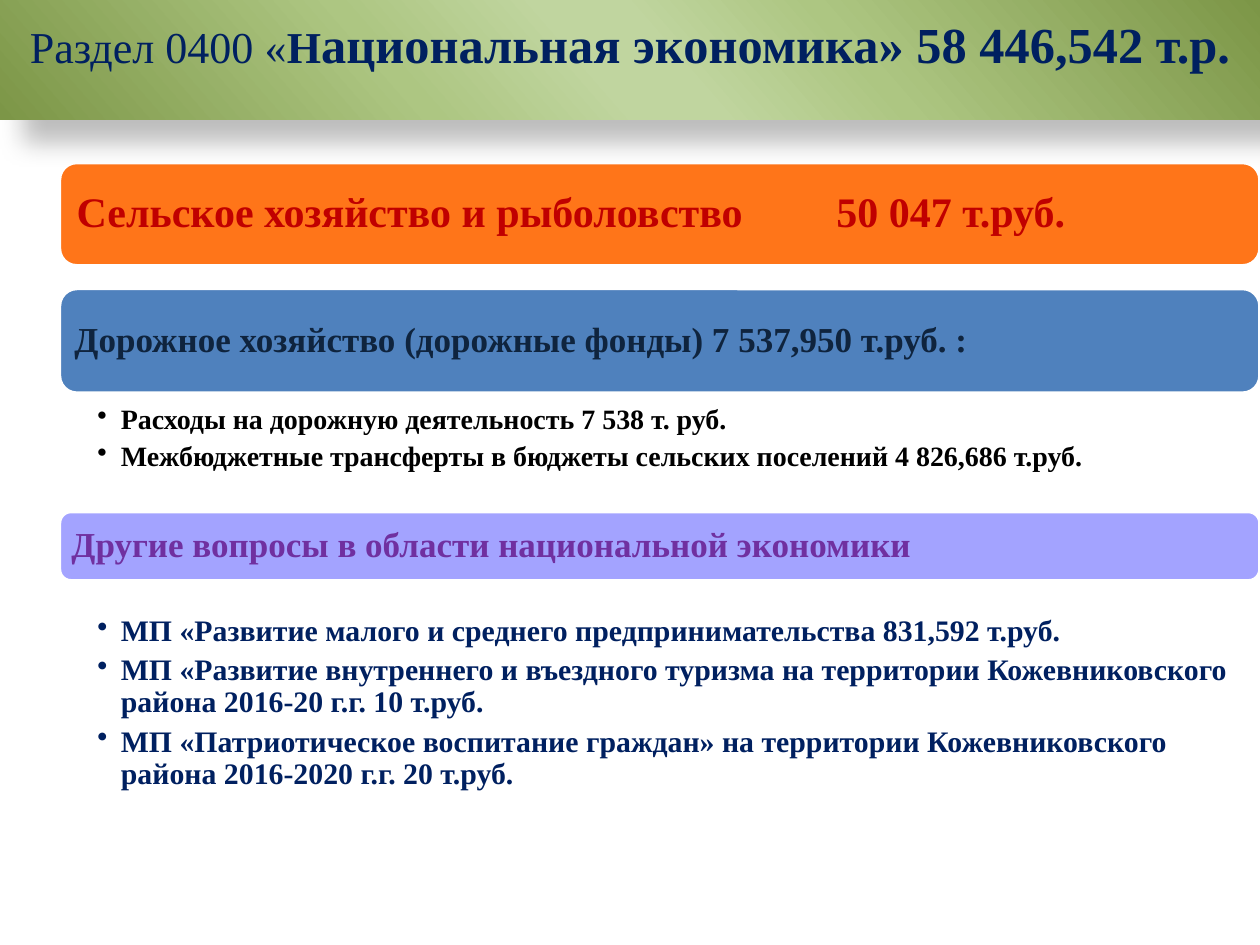
from lxml import etree
from pptx import Presentation
from pptx.dml.color import RGBColor
from pptx.enum.shapes import MSO_SHAPE
from pptx.enum.text import MSO_ANCHOR, PP_ALIGN
from pptx.oxml import parse_xml
from pptx.oxml.ns import qn
from pptx.util import Pt

RECT, ROUND = MSO_SHAPE.RECTANGLE, MSO_SHAPE.ROUNDED_RECTANGLE
TOP, MIDDLE = MSO_ANCHOR.TOP, MSO_ANCHOR.MIDDLE
LEFT, CENTER = PP_ALIGN.LEFT, PP_ALIGN.CENTER
FONT = "Times New Roman"
NS = 'xmlns:a="http://schemas.openxmlformats.org/drawingml/2006/main"'

COLORS = {
    "white": "FFFFFF", "black": "000000", "navy": "002060",
    "orange": "FF6600", "red": "C00000", "blue": "4F81BD",
    "ink": "0F243E", "lilac": "9999FF", "purple": "7030A0",
    "moss": "7C9647", "leaf": "ADC682", "pale": "C0D59F",
}

# Content: title runs as (text, size, bold)
TITLE = [("Раздел 0400 «", 25.2, False), ("Н", 25.2, True),
         ("ациональная экономика» 58 446,542 т.р.", 28.8, True)]
FADE = [(0, "moss"), (33, "leaf"), (47, "pale"), (53, "pale"),
        (68, "leaf"), (100, "moss")]

# Cards: text, top, height, inset, size, font colour, fill, opacity
CARDS = [
    ("Сельское хозяйство и рыболовство\t50 047 т.руб.",
     92.9, 59, 10, 24, "red", "orange", 90),
    ("Дорожное хозяйство (дорожные фонды) 7 537,950 т.руб. :",
     164.9, 59.8, 8.6, 20, "ink", "blue", 100),
    ("Другие вопросы в области национальной экономики",
     292.3, 39.6, 7.9, 20, "purple", "lilac", 90),
]
# Lists: top, height, size, colour, items
LISTS = [
    (230.4, 60, 16, "black", [
        "Расходы на дорожную деятельность 7 538 т. руб.",
        "Межбюджетные трансферты в бюджеты сельских поселений "
        "4 826,686 т.руб."]),
    (350.6, 100.8, 17, "navy", [
        "МП «Развитие малого и среднего предпринимательства "
        "831,592 т.руб.",
        "МП «Развитие внутреннего и въездного туризма на территории "
        "Кожевниковского района 2016-20 г.г. 10 т.руб.",
        "МП «Патриотическое воспитание граждан» на территории "
        "Кожевниковского района 2016-2020 г.г. 20 т.руб."]),
]
WIDE, HIGH = 720, 540
EDGE = 34
BODY = WIDE - EDGE
BAND = 68.4
TAB = 434


def color(name):
    return RGBColor.from_string(COLORS[name])


def style(run, size, name, bold=True):
    font = run.font
    font.name, font.size, font.bold = FONT, Pt(size), bold
    font.color.rgb = color(name)


def setup(frame, anchor, left, top, right):
    frame.word_wrap = True
    frame.vertical_anchor = anchor
    frame.margin_left, frame.margin_right = Pt(left), Pt(right)
    frame.margin_top = frame.margin_bottom = Pt(top)


def add_title(slide):
    band = slide.shapes.add_shape(RECT, 0, 0, Pt(WIDE), Pt(BAND))
    band.line.fill.background()
    # Gradient and soft shadow
    stops = "".join(
        f'<a:gs pos="{pos * 1000}"><a:srgbClr val="{COLORS[name]}"/></a:gs>'
        for pos, name in FADE)
    props = band.fill._xPr
    props.find(qn("a:prstGeom")).addnext(parse_xml(
        f'<a:gradFill {NS} rotWithShape="1"><a:gsLst>{stops}</a:gsLst>'
        f'<a:lin ang="{139 * 60000}" scaled="0"/></a:gradFill>'))
    props.append(parse_xml(
        f'<a:effectLst {NS}><a:outerShdw blurRad="{Pt(15)}" '
        f'dist="{Pt(18)}" dir="{45 * 60000}" algn="tl" rotWithShape="0">'
        f'<a:srgbClr val="{COLORS["black"]}"><a:alpha val="26000"/>'
        '</a:srgbClr></a:outerShdw></a:effectLst>'))
    setup(band.text_frame, TOP, 7.2, 7.2, 7.2)
    para = band.text_frame.paragraphs[0]
    para.alignment = CENTER
    for text, size, bold in TITLE:
        run = para.add_run()
        run.text = text
        style(run, size, "navy", bold)


def add_card(slide, text, top, high, inset, size, ink, fill, alpha):
    card = slide.shapes.add_shape(ROUND, Pt(EDGE), Pt(top), Pt(BODY), Pt(high))
    card.shadow.inherit = False
    card.fill.solid()
    card.fill.fore_color.rgb = color(fill)
    if alpha < 100:
        tint = card.fill._xPr.find(qn("a:solidFill"))[0]
        etree.SubElement(tint, qn("a:alpha")).set("val", str(alpha * 1000))
    card.line.color.rgb = color("white")
    card.line.width = Pt(2)
    # The rounded corner adds its own small inset to the text
    setup(card.text_frame, MIDDLE, max(inset - 3, 0), 0, 0)
    card.text_frame.text = text
    para = card.text_frame.paragraphs[0]
    para.alignment = LEFT
    para.line_spacing = 0.9
    if "\t" in text:
        tabs = etree.SubElement(para._p.get_or_add_pPr(), qn("a:tabLst"))
        etree.SubElement(tabs, qn("a:tab"), pos=str(Pt(TAB)), algn="l")
    for run in para.runs:
        style(run, size, ink)


def add_list(slide, top, high, size, ink, items):
    box = slide.shapes.add_textbox(Pt(EDGE), Pt(top), Pt(BODY), Pt(high))
    frame = box.text_frame
    setup(frame, TOP, 21.6, 1.4, 9)
    frame.text = "\n".join(items)
    for para in frame.paragraphs:
        para.level = 1
        para.line_spacing = 0.9
        para.space_after = Pt(4)
        props = para._p.get_or_add_pPr()
        props.set("marL", str(Pt(13.5)))
        props.set("indent", str(-Pt(13.5)))
        etree.SubElement(props, qn("a:buChar")).set("char", "•")
        for run in para.runs:
            style(run, size, ink)


def main():
    deck = Presentation()
    deck.slide_width, deck.slide_height = Pt(WIDE), Pt(HIGH)
    slide = deck.slides.add_slide(deck.slide_layouts[6])
    for card in CARDS:
        add_card(slide, *card)
    for part in LISTS:
        add_list(slide, *part)
    add_title(slide)
    deck.save("out.pptx")


if __name__ == "__main__":
    main()
